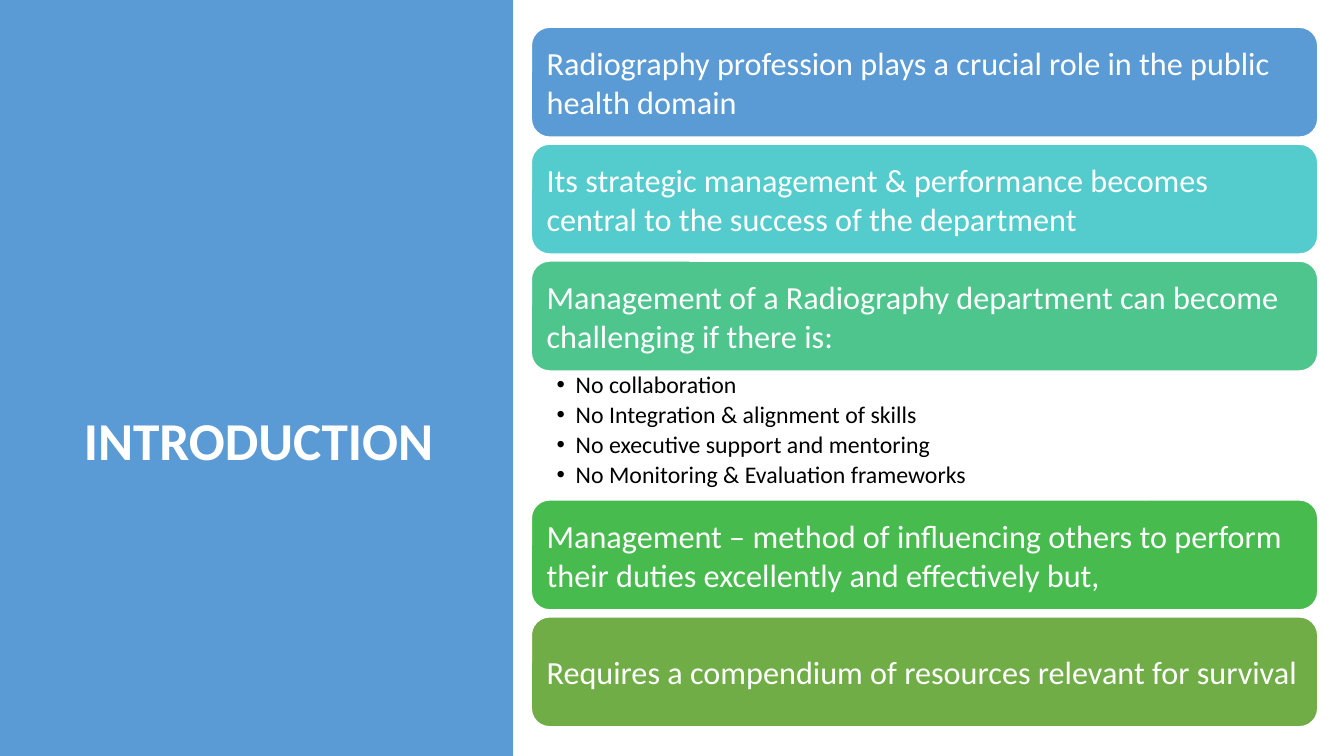
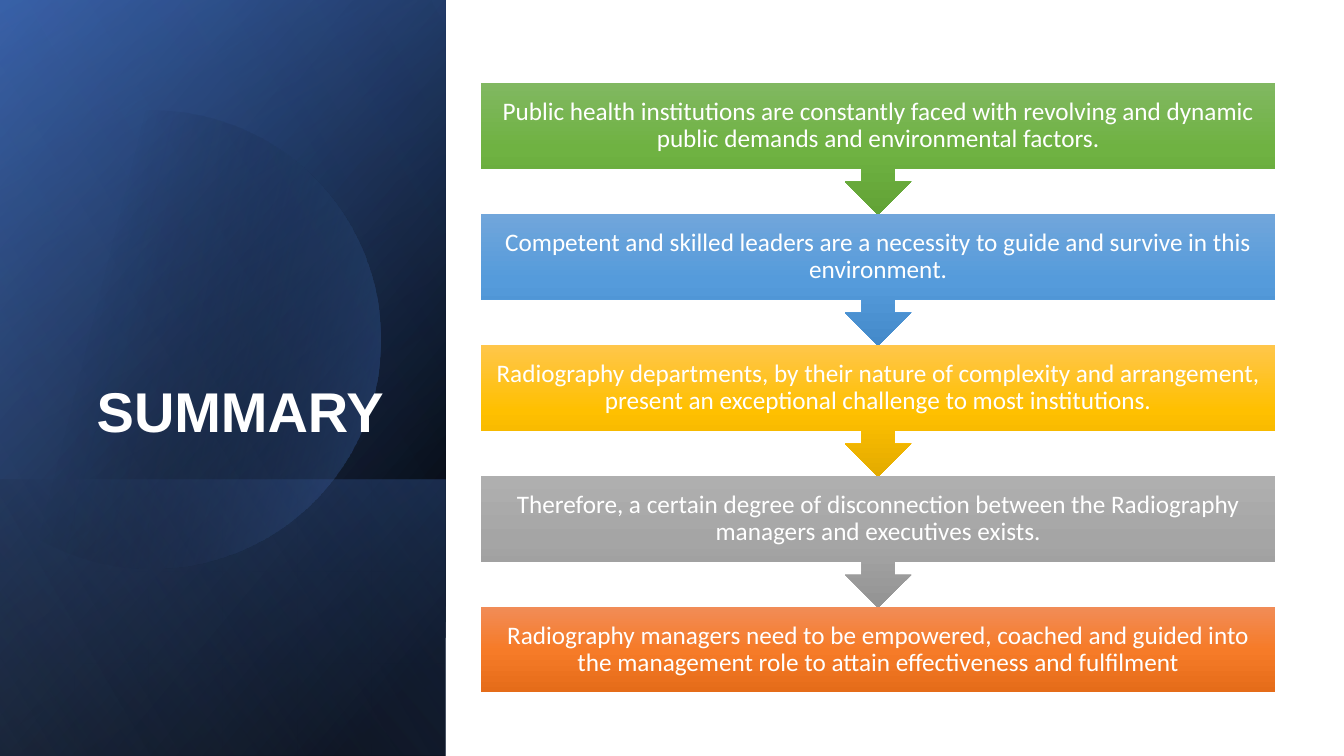
from math import cos, radians, sin

from pptx import Presentation
from pptx.dml.color import RGBColor
from pptx.enum.shapes import MSO_SHAPE
from pptx.enum.text import MSO_ANCHOR, MSO_AUTO_SIZE, PP_ALIGN
from pptx.oxml import parse_xml
from pptx.oxml.ns import nsdecls
from pptx.util import Inches, Pt

RECT, ROUND = MSO_SHAPE.RECTANGLE, MSO_SHAPE.ROUNDED_RECTANGLE
CALL = MSO_SHAPE.DOWN_ARROW_CALLOUT
TOP, MID, LOW = MSO_ANCHOR.TOP, MSO_ANCHOR.MIDDLE, MSO_ANCHOR.BOTTOM
LEFT, MIDST, RIGHT = PP_ALIGN.LEFT, PP_ALIGN.CENTER, PP_ALIGN.RIGHT
FIXED = MSO_AUTO_SIZE.NONE
WIDE, HIGH = 13.33, 7.5

# Content
CARDS = [
    ("Radiography profession plays a crucial role in the public health domain", "5B9BD5"),
    ("Its strategic management & performance becomes central to the success of the department",
     "54CCCD"),
    ("Management of a Radiography department can become challenging if there is:", "4DC58D"),
    ("Management – method of influencing others to perform their duties excellently "
     "and effectively but,", "48BB4F"),
    ("Requires a compendium of resources relevant for survival", "70AD47"),
]
LACKS = [
    "No collaboration",
    "No Integration & alignment of skills",
    "No executive support and mentoring",
    "No Monitoring & Evaluation frameworks",
]
LIST_AT = 2  # card that the list follows
STEPS = [
    ("Public health institutions are constantly faced with revolving and dynamic "
     "public demands and environmental factors.", ("81B861", "6FB242", "62A336")),
    ("Competent and skilled leaders are a necessity to guide and survive in this environment.",
     ("71A6DB", "559BDB", "448ACA")),
    ("Radiography departments, by their nature of complexity and arrangement, "
     "present an exceptional challenge to most institutions.", ("FFC64B", "FFC000", "E3AB00")),
    ("Therefore, a certain degree of disconnection between the Radiography managers "
     "and executives exists.", ("AFAFAF", "A5A5A5", "939393")),
    ("Radiography managers need to be empowered, coached and guided into the management "
     "role to attain effectiveness and fulfilment", ("F18C57", "F67B28", "E56C19")),
]

# Theme: colours and text styles
THEME = {
    "white": "FFFFFF", "black": "000000", "panel": "5B9BD5",
    "deep": "2F5597", "blue": "4472C4", "pale": "8FAADC",
    "title": {"font": {"size": Pt(38), "name": "Calibri", "bold": True}, "ink": "white",
              "para": {"alignment": RIGHT, "line_spacing": 0.9},
              "anchor": LOW, "pad": (0.1, 0.05, 0.1, 0.05)},
    "card": {"font": {"size": Pt(23), "name": "Calibri"}, "ink": "white",
             "para": {"alignment": LEFT}, "anchor": MID, "pad": (0.1,) * 4},
    "list": {"font": {"size": Pt(17), "name": "Calibri"}, "ink": "black",
             "para": {"alignment": LEFT, "line_spacing": 0.9,
                      "space_before": Pt(0), "space_after": Pt(3)},
             "anchor": TOP, "pad": (0.25, 0.02, 0.13, 0.02), "hang": 0.19},
    "step": {"font": {"size": Pt(18), "name": "Calibri"}, "ink": "white",
             "para": {"alignment": MIDST, "line_spacing": 0.9},
             "anchor": MID, "pad": (0.14,) * 4},
}
BIG = {**THEME["title"], "font": {"size": Pt(40), "name": "Arial", "bold": True}}

# Side panel layers: box, stops (share, colour, opacity), angle
FULL = (0, 0, 4.42, HIGH)
BASE = (FULL, [(8, "black", 100), (100, "deep", 100)], 220)
GLOW = (FULL, [(0, "black", 0), (99, "blue", 46)], 240)
FOOT = ((0, 4.76, 4.42, 2.74), [(2, "blue", 29), (100, "black", 30)], 140)
SHEEN = (FULL, [(0, "black", 0), (99, "pale", 11)], 150)
DISC = ([(29, "black", 0), (100, "blue", 43)], 14)


def put(obj, vals):
    for key, val in vals.items():
        setattr(obj, key, val)


def place(shape, box):
    put(shape, dict(zip(("left", "top", "width", "height"), map(Inches, box))))


def write(shape, lines, style):
    frame = shape.text_frame
    put(frame, {"word_wrap": True, "auto_size": FIXED, "vertical_anchor": style["anchor"]})
    sides = ("margin_left", "margin_top", "margin_right", "margin_bottom")
    put(frame, dict(zip(sides, map(Inches, style["pad"]))))
    for num, line in enumerate(lines):
        para = frame.add_paragraph() if num else frame.paragraphs[0]
        put(para, style["para"])
        if "hang" in style:
            hang = Inches(style["hang"])
            props = para._p.get_or_add_pPr()
            props.set("marL", str(hang))
            props.set("indent", str(-hang))
        run = para.add_run()
        run.text = line
        put(run.font, style["font"])
        run.font.color.rgb = RGBColor.from_string(THEME[style["ink"]])


def plain(shape):
    shape.shadow.inherit = False
    shape.line.fill.background()
    return shape


def draw(slide, kind, box, fill=None):
    shape = plain(slide.shapes.add_shape(kind, *map(Inches, box)))
    if fill:
        shape.fill.solid()
        shape.fill.fore_color.rgb = RGBColor.from_string(fill)
    return shape


def blend(shape, stops, angle):
    marks = "".join(
        f'<a:gs pos="{pos * 1000}"><a:srgbClr val="{THEME.get(hue, hue)}">'
        f'<a:alpha val="{seen * 1000}"/></a:srgbClr></a:gs>' for pos, hue, seen in stops)
    shape.element.spPr.insert(2, parse_xml(
        f'<a:gradFill {nsdecls("a")} rotWithShape="1"><a:gsLst>{marks}</a:gsLst>'
        f'<a:lin ang="{angle * 60000}" scaled="0"/></a:gradFill>'))


def start(deck, layout, title, box, style):
    slide = deck.slides.add_slide(deck.slide_layouts[layout])
    place(slide.shapes.title, box)
    write(slide.shapes.title, [title], style)
    return slide


def back(slide, shape):
    slide.shapes.title.element.addprevious(shape.element)


def intro(deck):
    slide = start(deck, 1, "INTRODUCTION ", (0.71, 0.7, 3.69, 4.03), THEME["title"])
    back(slide, draw(slide, RECT, (0, 0, 5.09, HIGH), THEME["panel"]))
    left, top, wide, high, gap, room = 5.27, 0.27, 7.8, 1.09, 0.07, 1.28
    body = slide.placeholders[1]
    for num, (text, fill) in enumerate(CARDS):
        card = draw(slide, ROUND, (left, top, wide, high), fill)
        card.line.color.rgb = RGBColor.from_string(THEME["white"])
        card.line.width = Pt(1)
        write(card, [text], THEME["card"])
        top += high
        if num == LIST_AT:
            place(body, (left, top, wide, room))
            write(body, LACKS, THEME["list"])
            card.element.addnext(body.element)
            top += room
        else:
            top += gap


def disc(slide):
    # Circle cut off along its lower left
    midx, midy, rad = 1.5, 3.37, 2.27
    arc = [(midx + rad * cos(radians(deg)), midy + rad * sin(radians(deg)))
           for deg in range(229, 480, 2)]
    dots = [(Inches(max(x, 0)), Inches(y)) for x, y in arc + [(0, 4.11)]]
    pen = slide.shapes.build_freeform(*dots[0])
    pen.add_line_segments(dots[1:], close=True)
    shape = plain(pen.convert_to_shape())
    blend(shape, *DISC)
    back(slide, shape)


def layer(slide, box, stops, angle):
    shape = draw(slide, RECT, box)
    blend(shape, stops, angle)
    back(slide, shape)


def closing(deck):
    slide = start(deck, 5, "SUMMARY ", (0.64, 1.84, 3.41, 2.62), BIG)
    for part in (BASE, GLOW, FOOT):
        layer(slide, *part)
    disc(slide)
    layer(slide, *SHEEN)
    left, top, wide, pitch = 4.77, 0.82, 7.88, 1.3
    for num, (text, hues) in enumerate(STEPS):
        last = num == len(STEPS) - 1
        kind, high = (RECT, 0.85) if last else (CALL, 1.31)
        step = draw(slide, kind, (left, top + num * pitch, wide, high))
        blend(step, [(pos, hue, 100) for pos, hue in zip((0, 50, 100), hues)], 90)
        write(step, [text], THEME["step"])


def main():
    deck = Presentation()
    put(deck, {"slide_width": Inches(WIDE), "slide_height": Inches(HIGH)})
    intro(deck)
    closing(deck)
    deck.save("out.pptx")


if __name__ == "__main__":
    main()
